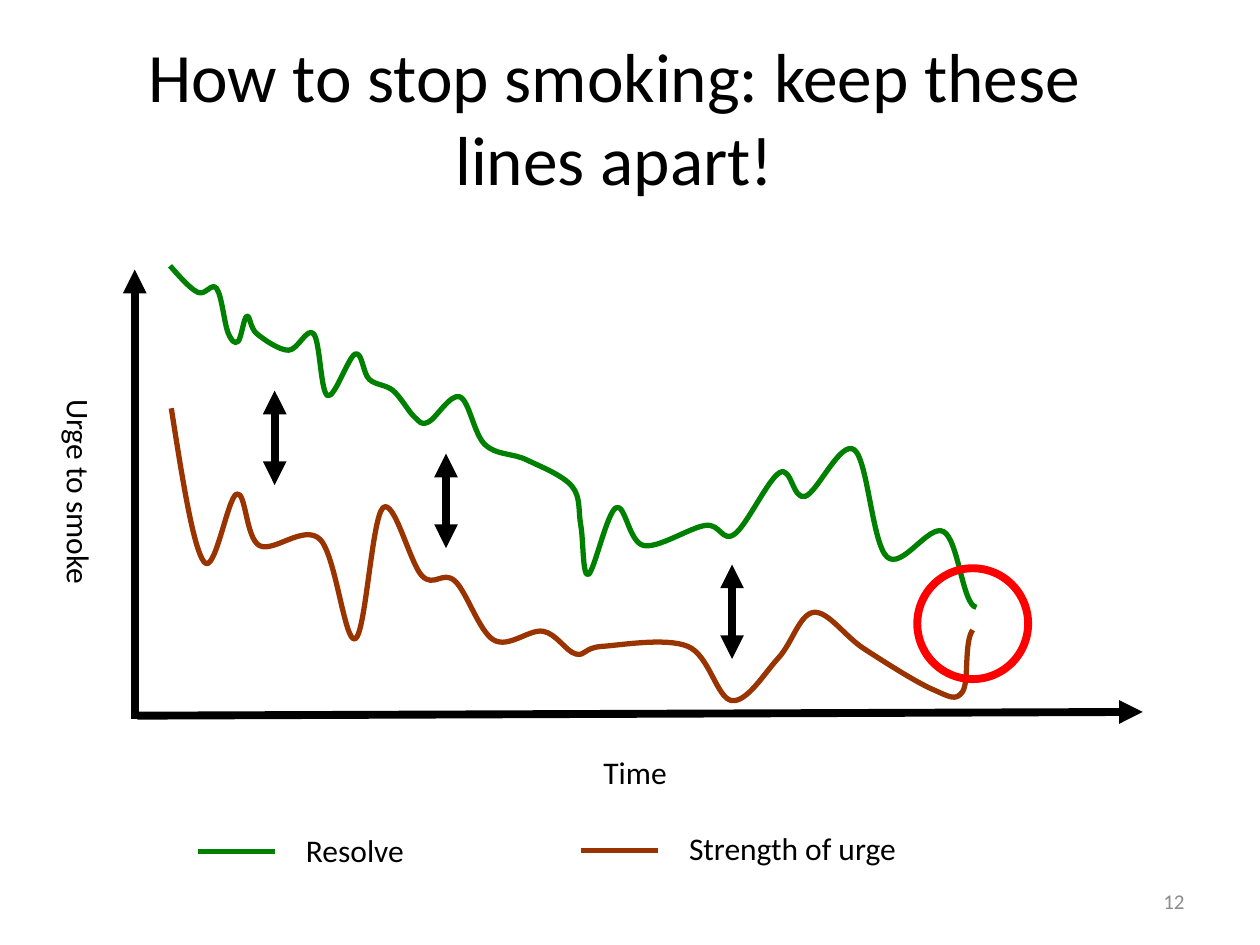
from lxml import etree
from pptx import Presentation
from pptx.dml.color import RGBColor
from pptx.enum.shapes import MSO_CONNECTOR, MSO_SHAPE
from pptx.enum.text import MSO_ANCHOR, MSO_AUTO_SIZE, PP_ALIGN
from pptx.oxml.ns import qn
from pptx.util import Inches, Pt

LINE, OVAL = MSO_CONNECTOR.STRAIGHT, MSO_SHAPE.OVAL
LEFT, MID, RIGHT = PP_ALIGN.LEFT, PP_ALIGN.CENTER, PP_ALIGN.RIGHT
TOP, CENTER = MSO_ANCHOR.TOP, MSO_ANCHOR.MIDDLE
GROW, FIXED = MSO_AUTO_SIZE.SHAPE_TO_FIT_TEXT, MSO_AUTO_SIZE.NONE

COLORS = {"ink": "000000", "gray": "8C8C8C", "resolve": "008000",
          "urge": "993300", "alert": "FF0000"}
FONT = "Calibri"
THICK, THIN = 4.5, 3

LABEL = {"size": 18, "color": "ink", "align": LEFT, "anchor": TOP,
         "wrap": False, "fit": GROW}
BLOCK = {**LABEL, "anchor": CENTER, "wrap": True, "fit": FIXED}
TEXTS = [
    ("How to stop smoking: keep these lines apart!", (0.5, 0.3, 8.75, 1.25),
     {**BLOCK, "size": 39.6, "align": MID}),
    ("12", (7.17, 6.95, 2.33, 0.4),
     {**BLOCK, "size": 12, "color": "gray", "align": RIGHT}),
    ("Urge to smoke", (0.33, 3.07, 0.5, 1.73), {**LABEL, "vert": "eaVert"}),
    ("Time", (4.69, 5.93, 0.76, 0.4), LABEL),
    ("Resolve", (2.33, 6.55, 1.1, 0.4), LABEL),
    ("Strength of urge", (5.37, 6.53, 1.99, 0.4), LABEL),
]

AXES = [((1.07, 2.14), (1.07, 5.71)), ((9.07, 5.65), (1.09, 5.68))]
GAPS = [(2.18, 3.1), (3.54, 3.6), (5.81, 4.48)]
GAP = 0.75
KEYS = [("resolve", 1.57, 6.76), ("urge", 4.61, 6.75)]
KEY = 0.61
RING = (7.28, 4.51, 0.88, 0.88)

# Points each curve passes through, and the last handle before its end
CURVES = [
    ("resolve", (7.64, 4.81), [
        (1.35, 2.11), (1.57, 2.32), (1.72, 2.29), (1.81, 2.64), (1.89, 2.71),
        (1.96, 2.51), (2.04, 2.65), (2.29, 2.78), (2.49, 2.65), (2.6, 3.14),
        (2.82, 2.81), (2.93, 3.01), (3.12, 3.1), (3.29, 3.31), (3.4, 3.35),
        (3.65, 3.15), (3.85, 3.53), (4.18, 3.65), (4.54, 3.86), (4.61, 4.17),
        (4.67, 4.56), (4.89, 4.03), (5.11, 4.33), (5.6, 4.17), (5.83, 4.24),
        (6.19, 3.75), (6.39, 3.94), (6.78, 3.57), (7.04, 4.42), (7.49, 4.22),
        (7.75, 4.82)]),
    ("urge", (7.65, 5.1), [
        (1.36, 3.24), (1.62, 4.46), (1.88, 3.92), (2.06, 4.33), (2.54, 4.28),
        (2.82, 5.07), (3.04, 4.03), (3.35, 4.57), (3.61, 4.61), (3.92, 5.08),
        (4.31, 5.01), (4.57, 5.19), (4.78, 5.13), (5.46, 5.13), (5.81, 5.56),
        (6.18, 5.22), (6.46, 4.86), (6.86, 5.15), (7.4, 5.47), (7.64, 5.49),
        (7.72, 5)]),
]


def rgb(name):
    return RGBColor.from_string(COLORS[name])


def ink(shape, color, width):
    shape.line.color.rgb = rgb(color)
    shape.line.width = Pt(width)


def add_text(slide, text, box, form):
    shape = slide.shapes.add_textbox(*map(Inches, box))
    frame = shape.text_frame
    for name, key in (("word_wrap", "wrap"), ("auto_size", "fit"),
                      ("vertical_anchor", "anchor")):
        setattr(frame, name, form[key])
    if "vert" in form:
        shape.element.txBody.find(qn("a:bodyPr")).set("vert", form["vert"])
    para = frame.paragraphs[0]
    para.alignment = form["align"]
    run = para.add_run()
    run.text = text
    run.font.name = FONT
    run.font.size = Pt(form["size"])
    run.font.color.rgb = rgb(form["color"])


def add_line(slide, start, end, color, width, tips=()):
    line = slide.shapes.add_connector(LINE, *map(Inches, start + end))
    ink(line, color, width)
    for tip in tips:
        etree.SubElement(line.line._get_or_add_ln(), qn("a:" + tip),
                         type="triangle")
    etree.SubElement(line.element.spPr, qn("a:effectLst"))


def handles(dots, last):
    """Return two Bezier handles for each span of a smooth curve."""
    def slope(i):
        return [(b - a) / 6 for a, b in zip(dots[i - 1], dots[i + 1])]

    spans = []
    end = len(dots) - 1
    for i in range(end):
        if i + 1 == end:
            back = last
        else:
            back = [p - s for p, s in zip(dots[i + 1], slope(i + 1))]
        if i == 0:
            out = [(p + q) / 2 for p, q in zip(dots[0], back)]
        else:
            out = [p + s for p, s in zip(dots[i], slope(i))]
        spans.append((out, back))
    return spans


def add_curve(slide, color, last, dots):
    """Draw a freeform through the dots, then bend its straight spans."""
    spots = [(Inches(x), Inches(y)) for x, y in dots]
    pen = slide.shapes.build_freeform(*spots[0])
    pen.add_line_segments(spots[1:], close=False)
    shape = pen.convert_to_shape()
    shape.shadow.inherit = False
    shape.fill.background()
    ink(shape, color, THIN)
    spans = list(shape.element.iter(qn("a:lnTo")))
    for span, pair in zip(spans, handles(dots, last)):
        span.tag = qn("a:cubicBezTo")
        for i, (x, y) in enumerate(pair):
            spot = etree.Element(qn("a:pt"), x=str(Inches(x) - shape.left),
                                 y=str(Inches(y) - shape.top))
            span.insert(i, spot)


def main():
    deck = Presentation()
    deck.slide_width, deck.slide_height = Inches(10), Inches(7.5)
    slide = deck.slides.add_slide(deck.slide_layouts[6])
    for text, box, form in TEXTS:
        add_text(slide, text, box, form)
    for start, end in AXES:
        add_line(slide, start, end, "ink", THICK, ["headEnd"])
    for color, last, dots in CURVES:
        add_curve(slide, color, last, dots)
    ring = slide.shapes.add_shape(OVAL, *map(Inches, RING))
    ring.shadow.inherit = False
    ring.fill.background()
    ink(ring, "alert", THICK)
    for color, x, y in KEYS:
        add_line(slide, (x, y), (x + KEY, y), color, THIN)
    for x, y in GAPS:
        add_line(slide, (x, y), (x, y + GAP), "ink", THICK,
                 ["headEnd", "tailEnd"])
    deck.save("out.pptx")


if __name__ == "__main__":
    main()
